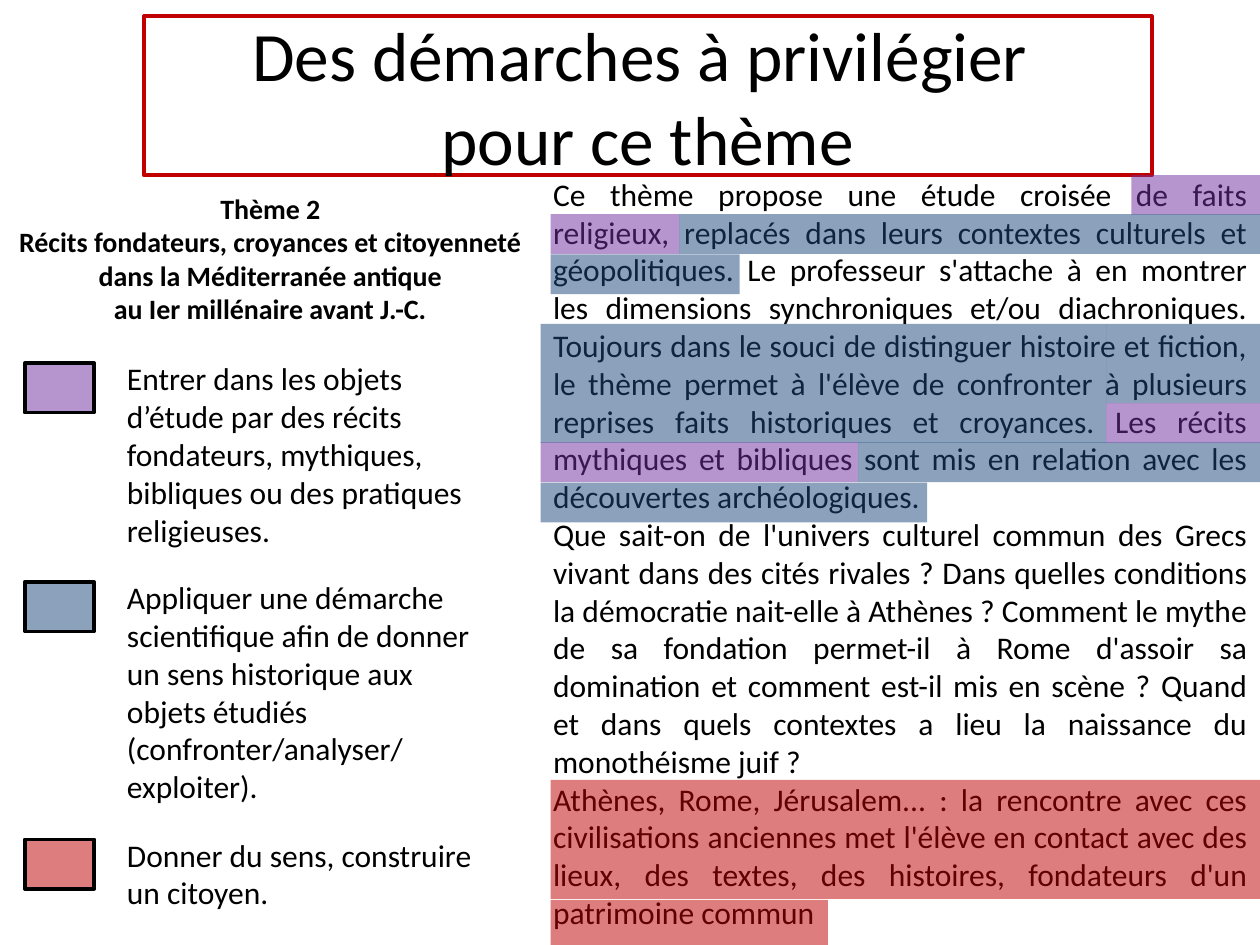
from lxml import etree
from pptx import Presentation
from pptx import util as u
from pptx.dml.color import RGBColor
from pptx.enum import shapes, text
from pptx.oxml.ns import qn

BLACK = RGBColor(0x00, 0x00, 0x00)
PURPLE = RGBColor(0x70, 0x30, 0xA0)
BLUE = RGBColor(0x1F, 0x49, 0x7D)
RED = RGBColor(0xC0, 0x00, 0x00)
FONT = "Calibri"
OPACITY = 51  # percent

TITLE = ["Des démarches à privilégier ", "pour ce thème"]
THEME = [
    "Thème 2",
    "Récits fondateurs, croyances et citoyenneté",
    "dans la Méditerranée antique",
    "au Ier millénaire avant J.-C.",
]
PROGRAMME = [
    "Ce thème propose une étude croisée de faits religieux, replacés dans leurs "
    "contextes culturels et géopolitiques. Le professeur s'attache à en montrer les "
    "dimensions synchroniques et/ou diachroniques. Toujours dans le souci de distinguer "
    "histoire et fiction, le thème permet à l'élève de confronter à plusieurs reprises "
    "faits historiques et croyances. Les récits mythiques et bibliques sont mis en "
    "relation avec les découvertes archéologiques.",
    "Que sait-on de l'univers culturel commun des Grecs vivant dans des cités rivales ? "
    "Dans quelles conditions la démocratie nait-elle à Athènes ? Comment le mythe de sa "
    "fondation permet-il à Rome d'assoir sa domination et comment est-il mis en scène ? "
    "Quand et dans quels contextes a lieu la naissance du monothéisme juif ?",
    "Athènes, Rome, Jérusalem... : la rencontre avec ces civilisations anciennes met "
    "l'élève en contact avec des lieux, des textes, des histoires, fondateurs d'un "
    "patrimoine commun",
]
# colour, swatch top, text width, text height, text
LEGEND = [
    (PURPLE, 7.32, 7.4, 4.11,
     "Entrer dans les objets d’étude par des récits fondateurs, mythiques, bibliques "
     "ou des pratiques religieuses."),
    (BLUE, 11.73, 7.6, 4.88,
     "Appliquer une démarche scientifique afin de donner un sens historique aux objets "
     "étudiés (confronter/analyser/ exploiter)."),
    (RED, 16.92, 7.6, 1.8, "Donner du sens, construire un citoyen."),
]

COLUMN, INDENT, EDGE = 10.9, 11.1, 25.4
LINE = 0.8
# colour, left, top, right, height
HIGHLIGHTS = [
    (PURPLE, 22.81, 3.53, EDGE, LINE),
    (PURPLE, INDENT, 4.32, 13.69, LINE),
    (BLUE, 13.69, 4.32, EDGE, LINE),
    (BLUE, INDENT, 5.13, 14.91, LINE),
    (BLUE, COLUMN, 6.53, 22.3, 3 * LINE),
    (BLUE, 22.3, 6.53, EDGE, 2 * LINE),
    (PURPLE, 22.3, 8.13, EDGE, LINE),
    (PURPLE, COLUMN, 8.92, 17.3, LINE),
    (BLUE, 17.3, 8.92, EDGE, LINE),
    (BLUE, COLUMN, 9.73, 18.69, LINE),
    (RED, INDENT, 15.72, EDGE, 3 * LINE),
    (RED, INDENT, 18.14, 16.69, 0.91),
]


def box(left, top, width, height):
    return u.Cm(left), u.Cm(top), u.Cm(width), u.Cm(height)


def add_run(paragraph, words, size, bold=False):
    run = paragraph.add_run()
    run.text = words
    run.font.name = FONT
    run.font.size = u.Pt(size)
    run.font.bold = bold
    run.font.color.rgb = BLACK


def add_text(slide, position, lines, size=18, alignment=text.PP_ALIGN.LEFT, bold=False):
    frame = slide.shapes.add_textbox(*box(*position)).text_frame
    frame.word_wrap = True
    frame.auto_size = text.MSO_AUTO_SIZE.SHAPE_TO_FIT_TEXT
    for index, line in enumerate(lines):
        paragraph = frame.add_paragraph() if index else frame.paragraphs[0]
        paragraph.alignment = alignment
        add_run(paragraph, line, size, bold)


def add_tint(slide, position, color, outlined=False):
    """Add a translucent rectangle, with a black outline if asked."""
    shape = slide.shapes.add_shape(shapes.MSO_SHAPE.RECTANGLE, *box(*position))
    shape.shadow.inherit = False
    shape.fill.solid()
    shape.fill.fore_color.rgb = color
    fill = shape.fill._xPr.find(qn("a:solidFill"))
    etree.SubElement(fill[0], qn("a:alpha"), val=str(OPACITY * 1000))
    if outlined:
        shape.line.color.rgb = BLACK
        shape.line.width = u.Pt(2)
    else:
        shape.line.fill.background()


def fill_title(title):
    title.left, title.top, title.width, title.height = box(2.9, 0.33, 20.32, 3.2)
    title.line.color.rgb = RED
    title.line.width = u.Pt(2.25)
    frame = title.text_frame
    frame.auto_size = text.MSO_AUTO_SIZE.NONE
    frame.vertical_anchor = text.MSO_ANCHOR.MIDDLE
    paragraph = frame.paragraphs[0]
    paragraph.alignment = text.PP_ALIGN.CENTER
    for index, line in enumerate(TITLE):
        if index:
            paragraph.add_line_break()
        add_run(paragraph, line, 39.6)


def main():
    presentation = Presentation()
    presentation.slide_width, presentation.slide_height = u.Cm(25.4), u.Cm(19.05)
    slide = presentation.slides.add_slide(presentation.slide_layouts[5])

    fill_title(slide.shapes.title)
    add_text(slide, (COLUMN, 3.4, 14.5, 15.65), PROGRAMME,
             alignment=text.PP_ALIGN.JUSTIFY)
    add_text(slide, (0, 3.73, COLUMN, 3), THEME, 16, text.PP_ALIGN.CENTER, True)
    for color, top, width, height, words in LEGEND:
        add_tint(slide, (0.5, top, 1.4, 1), color, outlined=True)
        add_text(slide, (2.31, top - 0.2, width, height), [words])
    for color, left, top, right, height in HIGHLIGHTS:
        add_tint(slide, (left, top, right - left, height), color)

    presentation.save("out.pptx")


if __name__ == "__main__":
    main()
